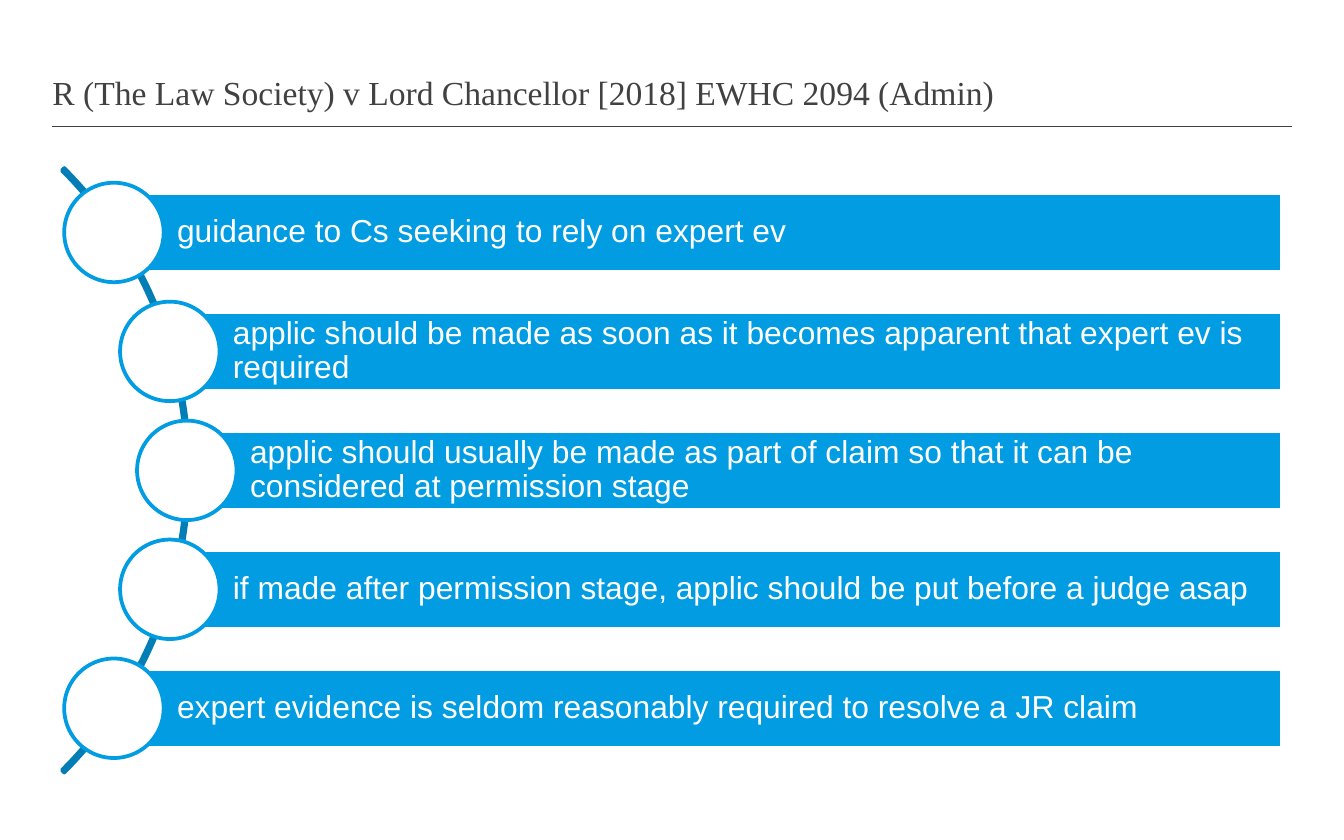
from math import sqrt

from lxml.etree import SubElement
from pptx import Presentation
from pptx.dml.color import RGBColor
from pptx.enum.shapes import MSO_CONNECTOR, MSO_SHAPE
from pptx.enum.text import MSO_ANCHOR, PP_ALIGN
from pptx.oxml.ns import qn
from pptx.util import Inches, Pt

TITLE = "R (The Law Society) v Lord Chancellor [2018] EWHC 2094 (Admin)"
POINTS = [
    "guidance to Cs seeking to rely on expert ev",
    "applic should be made as soon as it becomes apparent that expert ev is required",
    "applic should usually be made as part of claim so that it can be considered at permission stage",
    "if made after permission stage, applic should be put before a judge asap",
    "expert evidence is seldom reasonably required to resolve a JR claim",
]

WHITE = RGBColor(0xFF, 0xFF, 0xFF)
BLUE = RGBColor(0x02, 0x9C, 0xE2)
DARK_BLUE = RGBColor(0x02, 0x7D, 0xB5)
GREY = RGBColor(0x41, 0x40, 0x42)

MARGIN, RULE_Y = 0.39, 0.94
ARC_X, ARC_Y, ARC_SIZE = -1.77, 3.5, 6.36
CENTRE_RADIUS = 3.16  # the circles' centres sit on this radius
PITCH, BAR_HEIGHT, BAR_RIGHT, CIRCLE = 0.885, 0.59, 9.54, 0.74


def add_shape(kind, left, top, width, height, fill, line):
    shape = page.shapes.add_shape(
        kind, Inches(left), Inches(top), Inches(width), Inches(height))
    shape.shadow.inherit = False
    shape.fill.solid()
    shape.fill.fore_color.rgb = fill
    shape.line.color.rgb = line
    shape.line.width = Pt(2)
    return shape


def write(box, text, insets, font, size, color):
    """Put one left-aligned, vertically centred paragraph in the box."""
    frame = box.text_frame
    frame.word_wrap = True
    frame.vertical_anchor = MSO_ANCHOR.MIDDLE
    for side, inset in zip(("left", "top", "right", "bottom"), insets):
        setattr(frame, f"margin_{side}", Inches(inset))
    para = frame.paragraphs[0]
    para.alignment = PP_ALIGN.LEFT
    span = para.add_run()
    span.text = text
    for name, value in {"name": font, "size": Pt(size)}.items():
        setattr(span.font, name, value)
    span.font.color.rgb = color
    return para


deck = Presentation()
deck.slide_width, deck.slide_height = Inches(10), Inches(6.25)
page = deck.slides.add_slide(deck.slide_layouts[6])

rule = page.shapes.add_connector(
    MSO_CONNECTOR.STRAIGHT, Inches(MARGIN), Inches(RULE_Y),
    Inches(10 - MARGIN), Inches(RULE_Y))
rule.line.color.rgb = GREY
rule.line.width = Pt(0.75)
SubElement(rule._element.spPr, qn("a:effectLst"))

title = page.shapes.add_textbox(
    Inches(MARGIN), Inches(0.51), Inches(7.42), Inches(0.35))
write(title, TITLE, (0, 0, 0, 0), "Times New Roman", 18, GREY)

arc = add_shape(MSO_SHAPE.BLOCK_ARC, ARC_X - ARC_SIZE / 2, ARC_Y - ARC_SIZE / 2,
                ARC_SIZE, ARC_SIZE, DARK_BLUE, DARK_BLUE)
for index, value in enumerate((189, 27, 0.004)):
    arc.adjustments[index] = value

for index, point in enumerate(POINTS):
    offset = (index - (len(POINTS) - 1) / 2) * PITCH
    x = ARC_X + sqrt(CENTRE_RADIUS ** 2 - offset ** 2)
    y = ARC_Y + offset
    bar = add_shape(MSO_SHAPE.RECTANGLE, x, y - BAR_HEIGHT / 2,
                    BAR_RIGHT - x, BAR_HEIGHT, BLUE, WHITE)
    para = write(bar, point, (0.47, 0.05, 0.05, 0.05), "Arial", 17, WHITE)
    para.line_spacing = 0.9
    add_shape(MSO_SHAPE.OVAL, x - CIRCLE / 2, y - CIRCLE / 2,
              CIRCLE, CIRCLE, WHITE, BLUE)

deck.save("out.pptx")
